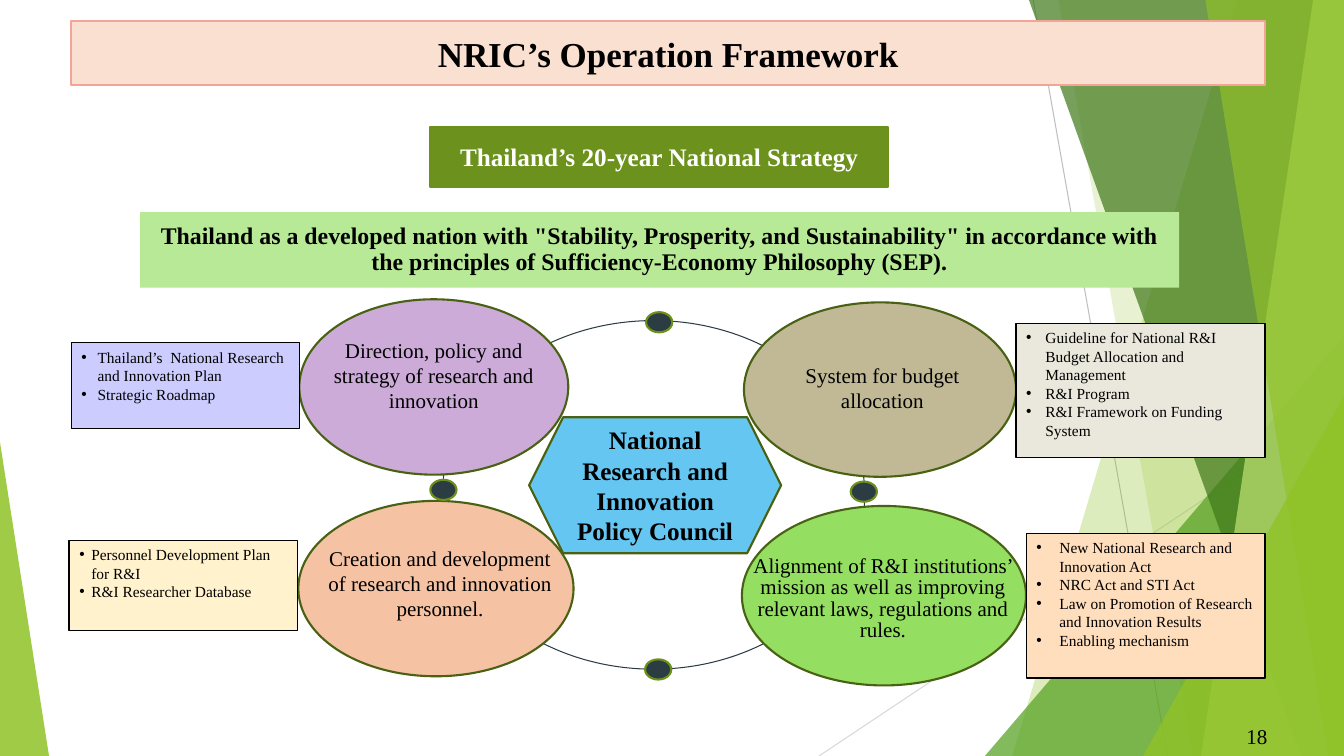
from lxml.etree import SubElement
from pptx import Presentation
from pptx.dml.color import RGBColor
from pptx.enum.shapes import MSO_CONNECTOR, MSO_SHAPE
from pptx.enum.text import MSO_ANCHOR, MSO_AUTO_SIZE, PP_ALIGN
from pptx.oxml.ns import qn
from pptx.util import Pt


def paint(sp, fill=None, line=None, width=1.5, alpha=None):
    if fill:
        sp.fill.solid()
        sp.fill.fore_color.rgb = RGBColor.from_string(fill)
    else:
        sp.fill.background()
    if alpha:
        clr = sp.fill._xPr.find(qn("a:solidFill"))[0]
        SubElement(clr, qn("a:alpha"), val=str(alpha * 1000))
    if line:
        sp.line.color.rgb = RGBColor.from_string(line)
        sp.line.width = Pt(width)
    else:
        sp.line.fill.background()
    if not sp.is_placeholder:
        sp.shadow.inherit = False


def write(sp, lines, size, bold=False, color="000000", align=PP_ALIGN.CENTER,
          anchor=MSO_ANCHOR.MIDDLE, spacing=1.0):
    tf = sp.text_frame
    tf.word_wrap = True
    tf.auto_size = MSO_AUTO_SIZE.NONE
    tf.vertical_anchor = anchor
    tf.text = "\n".join(lines)
    for p in tf.paragraphs:
        p.alignment = align
        p.line_spacing = spacing
        p.space_before = Pt(0)
        p.font.name = "Times New Roman"
        p.font.size = Pt(size)
        p.font.bold = bold
        p.font.color.rgb = RGBColor.from_string(color)


prs = Presentation()
prs.slide_width, prs.slide_height = Pt(960), Pt(540)
s = prs.slides.add_slide(prs.slide_layouts[4])

for x1, y1, x2, y2, color in [(738, 0, 834, 540, "BFBFBF"), (960, 290, 585, 540, "D9D9D9")]:
    ln = s.shapes.add_connector(MSO_CONNECTOR.STRAIGHT, Pt(x1), Pt(y1), Pt(x2), Pt(y2))
    ln.line.color.rgb = RGBColor.from_string(color)
    ln.line.width = Pt(0.75)
    SubElement(ln._element.spPr, qn("a:effectLst"))

facets = [
    ("band", 884, 723, "90C226", 30),
    ("band", 756, 852, "90C226", 20),
    ("triangle", (703.5, 240, 256.5, 300), 1, "54A021", 72),
    ("band", 735, 929.5, "3F7819", 70),
    ("band", 938, 858, "C0E474", 70),
    ("band", 861, 949, "90C226", 65),
    ("triangle", (816.5, 283, 143.5, 257), 1, "90C226", 80),
    ("triangle", (0, 316, 35, 224), 0, "90C226", 85),
]
for kind, a, b, color, alpha in facets:
    if kind == "band":
        fb = s.shapes.build_freeform(Pt(a), Pt(0))
        fb.add_line_segments([(Pt(960), Pt(0)), (Pt(960), Pt(540)), (Pt(b), Pt(540))])
        sp = fb.convert_to_shape()
    else:
        sp = s.shapes.add_shape(MSO_SHAPE.ISOSCELES_TRIANGLE, *map(Pt, a))
        sp.adjustments[0] = b
    paint(sp, color, alpha=alpha)

ring = s.shapes.add_shape(MSO_SHAPE.OVAL, Pt(316), Pt(229), Pt(301.7), Pt(249))
paint(ring, line="2C3C43", width=0.75)

council = s.shapes.add_shape(MSO_SHAPE.HEXAGON, Pt(378), Pt(298), Pt(180), Pt(97.2))
paint(council, "65C6F1", "486113")
write(council, ["National Research and Innovation Policy Council"], 18, bold=True)

missions = [
    ((531.4, 216, 194.4, 124.6), "C1B995", (544.3, 255.6, 172, 44), 1.0,
     "System for budget allocation"),
    ((213.8, 213.8, 192.2, 125.3), "CCABD9", (226, 237.6, 167.8, 62), 1.0,
     "Direction, policy and strategy of research and innovation"),
    ((213.1, 357.8, 196.6, 125.3), "F5C2A3", (222.5, 386, 183.6, 62), 1.0,
     "Creation and development of research and innovation personnel."),
    ((529.9, 361.4, 203, 128.2), "94DE61", (526.3, 393.8, 208.8, 69), 0.85,
     "Alignment of R&I institutions’ mission as well as improving relevant laws, "
     "regulations and rules."),
]
for oval, color, box, spacing, text in missions:
    sp = s.shapes.add_shape(MSO_SHAPE.OVAL, *map(Pt, oval))
    paint(sp, color, "486113")
    tb = s.shapes.add_textbox(*map(Pt, box))
    write(tb, [text], 15, anchor=MSO_ANCHOR.TOP, spacing=spacing)

for x, y in [(461.5, 223), (607.7, 344), (307.4, 342.7), (460.8, 471)]:
    dot = s.shapes.add_shape(MSO_SHAPE.OVAL, Pt(x), Pt(y), Pt(18.7), Pt(14.4))
    paint(dot, "2C3C43", "6B901C")

title, *bodies = s.placeholders
title.left, title.top, title.width, title.height = Pt(51), Pt(15), Pt(852.5), Pt(46)
paint(title, "FAE0D1", "F2A499")
write(title, ["NRIC’s Operation Framework"], 25, bold=True)
title.element.getparent().append(title.element)

strategy = s.shapes.add_shape(MSO_SHAPE.RECTANGLE, Pt(307.4), Pt(90.5), Pt(327), Pt(43))
paint(strategy, "6C921D", "6B901C")
write(strategy, ["Thailand’s 20-year National Strategy"], 18, bold=True, color="FFFFFF")

vision = s.shapes.add_shape(MSO_SHAPE.RECTANGLE, Pt(100), Pt(151.5), Pt(742.3), Pt(54))
paint(vision, "B7E996")
write(vision, ['Thailand as a developed nation with "Stability, Prosperity, and Sustainability" '
               "in accordance with the principles of Sufficiency-Economy Philosophy (SEP)."],
      17, bold=True, spacing=0.9)

outputs = [
    ((51, 244.8, 163, 61.2), "CCCCFF", 11.5,
     ["Thailand’s  National Research and Innovation Plan", "Strategic Roadmap"]),
    ((49.4, 386, 163, 64.2), "FFF2CC", 8.6,
     ["Personnel Development Plan for R&I", "R&I Researcher Database"]),
    ((725.8, 231, 177.8, 96), "EAE8DC", 13.7,
     ["Guideline for National R&I Budget Allocation and Management", "R&I Program",
      "R&I Framework on Funding System"]),
    ((733, 380.9, 170.6, 103.5), "FFDEBD", 16.5,
     ["New National Research and Innovation Act", "NRC Act and STI Act",
      "Law on Promotion of Research and Innovation Results", "Enabling mechanism"]),
]
for sp, (box, color, indent, items) in zip(bodies, outputs):
    sp.left, sp.top, sp.width, sp.height = map(Pt, box)
    paint(sp, color, "000000", 1)
    write(sp, items, 11, align=PP_ALIGN.LEFT, anchor=MSO_ANCHOR.TOP)
    for p in sp.text_frame.paragraphs:
        pPr = p._p.get_or_add_pPr()
        pPr.set("marL", str(Pt(indent)))
        pPr.set("indent", str(-Pt(indent)))
        bullet = pPr.makeelement(qn("a:buChar"), {"char": "•"})
        pPr.find(qn("a:defRPr")).addprevious(bullet)
    sp.element.getparent().append(sp.element)

number = s.shapes.add_textbox(Pt(718), Pt(511.2), Pt(194.4), Pt(28.8))
write(number, ["18"], 15, align=PP_ALIGN.RIGHT)

prs.save("out.pptx")
